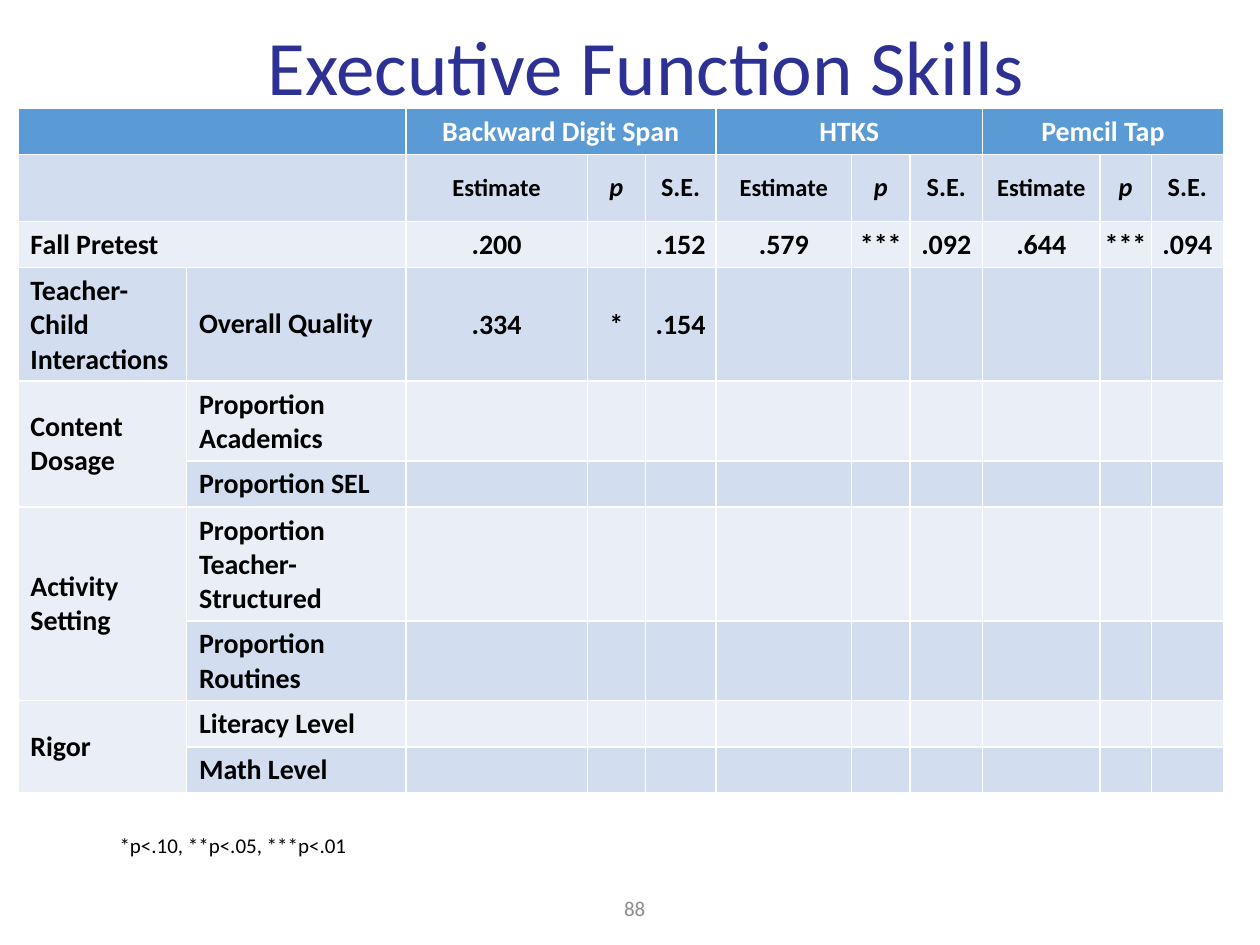
from dataclasses import dataclass

from lxml import etree
from pptx import Presentation
from pptx.dml.color import RGBColor
from pptx.enum import text
from pptx.oxml.ns import qn
from pptx.util import Cm, Pt

FONT = "Calibri"
COLORS = {
    "title": "2D3193",
    "header": "5B9BD5",
    "dark_band": "D2DEEF",
    "light_band": "EAEFF7",
    "border": "FFFFFF",
    "header_text": "FFFFFF",
    "body_text": "000000",
    "page_number": "8C8C8C",
}
COLUMN_WIDTHS = (3.40, 4.42, 3.66, 1.17, 1.42, 2.74, 1.17, 1.47, 2.36, 1.04, 1.45)
MEASURES = ("Backward Digit Span", "HTKS", "Pemcil Tap")
FIRST_VALUE_COLUMN = 2
COLUMNS_PER_MEASURE = 3
LEFT, CENTER, RIGHT = text.PP_ALIGN.LEFT, text.PP_ALIGN.CENTER, text.PP_ALIGN.RIGHT


@dataclass
class Style:
    size: float
    color: str = "body_text"
    bold: bool = False
    italic: bool = False
    align: text.PP_ALIGN = LEFT


@dataclass
class Predictor:
    group: str
    name: str
    height: float
    values: tuple[str, ...] = ()


HEADER = Style(16, "header_text", bold=True, align=CENTER)
LABEL = Style(16, bold=True)
VALUE = Style(16, bold=True, align=CENTER)
SUBHEADS = (
    ("Estimate", Style(14, bold=True, align=CENTER)),
    ("p", Style(15, bold=True, italic=True, align=CENTER)),
    ("S.E.", Style(15, bold=True, align=CENTER)),
)
HEADING_HEIGHTS = (0.93, 1.35)
PREDICTORS = (
    Predictor("Fall Pretest", "", 0.93,
              (".200", "", ".152", ".579", "***", ".092", ".644", "***", ".094")),
    Predictor("Teacher-Child Interactions", "Overall Quality", 2.29, (".334", "*", ".154")),
    Predictor("Content Dosage", "Proportion Academics", 1.6),
    Predictor("", "Proportion SEL", 0.93),
    Predictor("Activity Setting", "Proportion Teacher-Structured", 2.29),
    Predictor("", "Proportion Routines", 1.6),
    Predictor("Rigor", "Literacy Level", 0.93),
    Predictor("", "Math Level", 0.93),
)


def rgb(name: str) -> RGBColor:
    return RGBColor.from_string(COLORS[name])


def write(paragraph, words: str, style: Style) -> None:
    paragraph.alignment = style.align
    run = paragraph.add_run()
    run.text = words
    run.font.name = FONT
    run.font.size = Pt(style.size)
    run.font.bold = style.bold
    run.font.italic = style.italic
    run.font.color.rgb = rgb(style.color)


def add_note(slide, box: tuple[float, ...], words: str, style: Style, anchor) -> None:
    frame = slide.shapes.add_textbox(*map(Cm, box)).text_frame
    frame.word_wrap = True
    frame.vertical_anchor = anchor
    write(frame.paragraphs[0], words, style)


def format_cell(cell, fill: str) -> None:
    properties = cell._tc.get_or_add_tcPr()
    for index, side in enumerate(("lnL", "lnR", "lnT", "lnB")):
        line = etree.Element(qn(f"a:{side}"), w=str(Pt(1)))
        solid = etree.SubElement(line, qn("a:solidFill"))
        etree.SubElement(solid, qn("a:srgbClr"), val=COLORS["border"])
        properties.insert(index, line)
    cell.fill.solid()
    cell.fill.fore_color.rgb = rgb(fill)
    cell.vertical_anchor = text.MSO_ANCHOR.MIDDLE
    # Blank cells keep the label size so that they do not stretch their row
    ending = cell.text_frame.paragraphs[0]._p.get_or_add_endParaRPr()
    ending.set("sz", "1600")


def fill_cell(cell, words: str, style: Style) -> None:
    if words:
        write(cell.text_frame.paragraphs[0], words, style)


def fill_headings(table) -> None:
    for row in (0, 1):
        table.cell(row, 0).merge(table.cell(row, 1))
    for index, measure in enumerate(MEASURES):
        start = FIRST_VALUE_COLUMN + index * COLUMNS_PER_MEASURE
        table.cell(0, start).merge(table.cell(0, start + COLUMNS_PER_MEASURE - 1))
        fill_cell(table.cell(0, start), measure, HEADER)
        for offset, (words, style) in enumerate(SUBHEADS):
            fill_cell(table.cell(1, start + offset), words, style)


def fill_predictors(table) -> None:
    for row, predictor in enumerate(PREDICTORS, start=len(HEADING_HEIGHTS)):
        if not predictor.name:
            table.cell(row, 0).merge(table.cell(row, 1))
        if not predictor.group:
            table.cell(row - 1, 0).merge(table.cell(row, 0))
        fill_cell(table.cell(row, 0), predictor.group, LABEL)
        fill_cell(table.cell(row, 1), predictor.name, LABEL)
        for column, words in enumerate(predictor.values, start=FIRST_VALUE_COLUMN):
            cell = table.cell(row, column)
            cell.margin_left = cell.margin_right = cell.margin_top = Cm(0.03)
            cell.margin_bottom = 0
            fill_cell(cell, words, VALUE)


def add_results_table(slide) -> None:
    heights = (*HEADING_HEIGHTS, *(predictor.height for predictor in PREDICTORS))
    table = slide.shapes.add_table(
        len(heights), len(COLUMN_WIDTHS), Cm(0.36), Cm(2.18),
        Cm(sum(COLUMN_WIDTHS)), Cm(sum(heights))).table
    for column, width in zip(table.columns, COLUMN_WIDTHS):
        column.width = Cm(width)
    for index, (row, height) in enumerate(zip(table.rows, heights)):
        row.height = Cm(height)
        band = "dark_band" if index % 2 else "light_band"
        for cell in row.cells:
            format_cell(cell, band if index else "header")
    fill_headings(table)
    fill_predictors(table)


def add_title(slide) -> None:
    title = slide.shapes.title
    title.left, title.top, title.width, title.height = map(Cm, (2.08, -0.41, 21.9, 3.68))
    frame = title.text_frame
    frame.auto_size = text.MSO_AUTO_SIZE.NONE
    frame.vertical_anchor = text.MSO_ANCHOR.MIDDLE
    paragraph = frame.paragraphs[0]
    paragraph.line_spacing = 0.9
    write(paragraph, "Executive Function Skills", Style(44, "title", align=CENTER))


def main() -> None:
    presentation = Presentation()
    presentation.slide_width, presentation.slide_height = Cm(25.4), Cm(19.05)
    slide = presentation.slides.add_slide(presentation.slide_layouts.get_by_name("Title Only"))
    add_title(slide)
    add_note(slide, (7.54, 17.8, 5.72, 1.02), "88",
             Style(12, "page_number", align=RIGHT), text.MSO_ANCHOR.MIDDLE)
    add_note(slide, (2.16, 16.66, 9.07, 0.76), "*p<.10, **p<.05, ***p<.01",
             Style(12), text.MSO_ANCHOR.TOP)
    add_results_table(slide)
    presentation.save("out.pptx")


if __name__ == "__main__":
    main()
